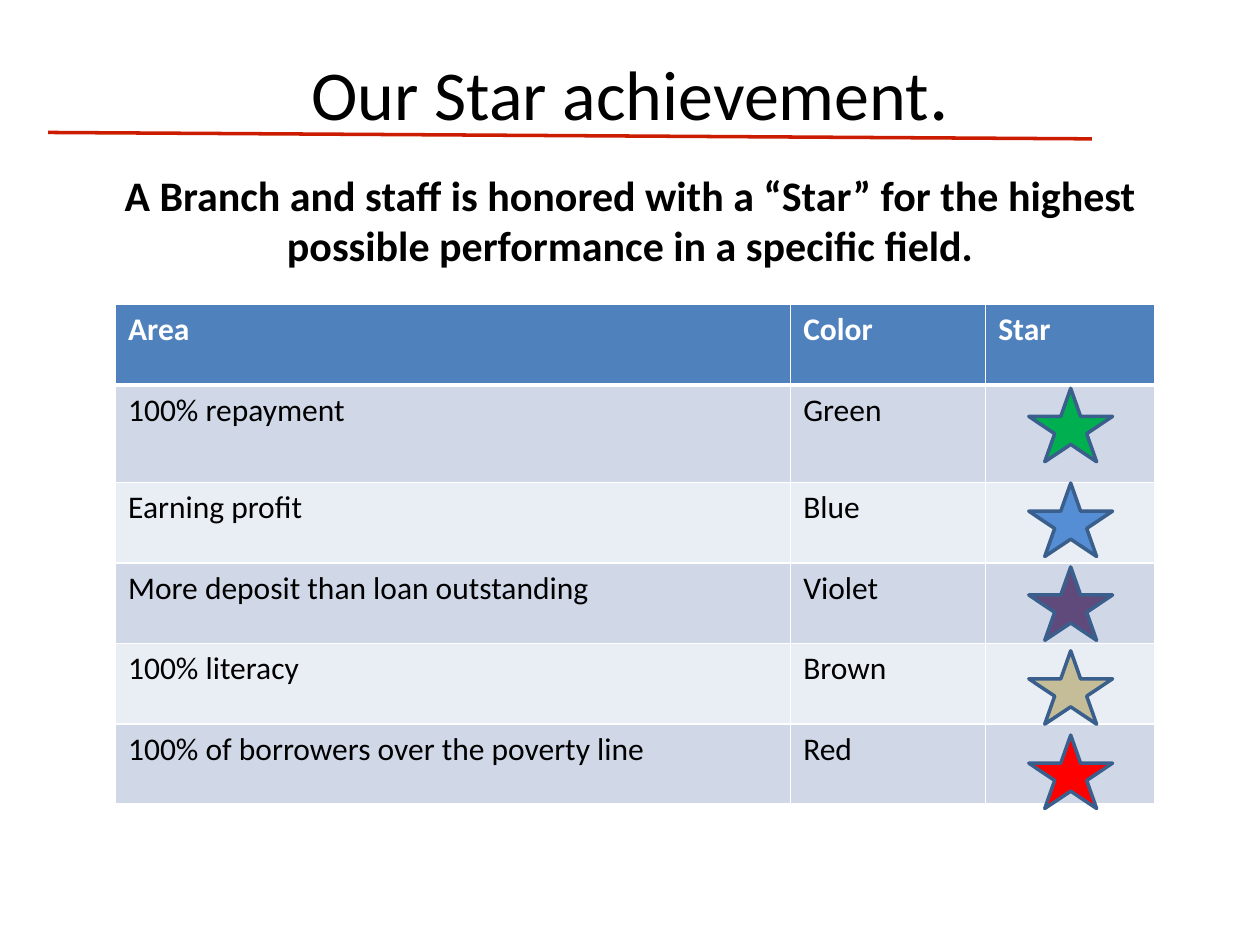
"""Build the slide on star awards for branches."""
from dataclasses import dataclass

from lxml import etree
from pptx import Presentation
from pptx import util as u
from pptx.dml.color import RGBColor
from pptx.enum import shapes, text
from pptx.oxml.ns import qn


@dataclass(frozen=True)
class Theme:
    face: str = "Calibri"
    ink: str = "000000"
    white: str = "FFFFFF"
    head: str = "4F81BD"
    bands: tuple = ("D0D8E8", "E9EDF4")
    rule: str = "CB1C00"
    edge: str = "3A5F8C"
    title: int = 40
    dot: int = 44
    lead: int = 24
    cell: int = 18
    line: int = 2
    thin: int = 1
    thick: int = 3


THEME = Theme()
AWARDS = [
    ("100% repayment", "Green", "00B050", 7.83),
    ("Earning profit", "Blue", "558ED5", 9.74),
    ("More deposit than loan outstanding", "Violet", "604A7B", 11.43),
    ("100% literacy", "Brown", "C4BD97", 13.12),
    ("100% of borrowers over the poverty line", "Red", "FF0000", 14.82),
]
WIDTHS = (13.61, 3.93, 3.41)
HEIGHTS = (1.62, 1.97, 1.62, 1.62, 1.62, 1.62)


def rgb(code):
    return RGBColor.from_string(code)


def style(font, size, color, bold=False):
    font.name, font.size, font.bold = THEME.face, u.Pt(size), bold
    font.color.rgb = rgb(color)


def fill_holder(holder, box, words, size, bold=False):
    holder.left, holder.top, holder.width, holder.height = map(u.Cm, box)
    frame = holder.text_frame
    frame.text = words
    frame.word_wrap = True
    frame.auto_size = text.MSO_AUTO_SIZE.NONE
    frame.vertical_anchor = text.MSO_ANCHOR.MIDDLE
    para = frame.paragraphs[0]
    para.alignment = text.PP_ALIGN.CENTER
    para.space_before = u.Pt(0)
    style(para.font, size, color=THEME.ink, bold=bold)
    return para


def add_rule(slide, start, end):
    rule = slide.shapes.add_connector(
        shapes.MSO_CONNECTOR.STRAIGHT, *map(u.Cm, start + end))
    rule.line.color.rgb = rgb(THEME.rule)
    rule.line.width = u.Pt(THEME.line)
    etree.SubElement(rule._element.spPr, qn("a:effectLst"))


def set_edges(cell, row):
    props = cell._tc.get_or_add_tcPr()
    thick = {(0, "lnB"), (1, "lnT")}
    for side in ("lnL", "lnR", "lnT", "lnB"):
        size = THEME.thick if (row, side) in thick else THEME.thin
        edge = etree.SubElement(props, qn(f"a:{side}"), w=str(u.Pt(size)))
        fill = etree.SubElement(edge, qn("a:solidFill"))
        etree.SubElement(fill, qn("a:srgbClr"), val=THEME.white)


def add_grid(slide, left, top):
    rows = [("Area", "Color", "Star")]
    rows += [(area, color, "") for area, color, _, _ in AWARDS]
    grid = slide.shapes.add_table(
        len(rows), len(WIDTHS), u.Cm(left), u.Cm(top),
        u.Cm(sum(WIDTHS)), u.Cm(sum(HEIGHTS))).table
    for col, width in zip(grid.columns, WIDTHS):
        col.width = u.Cm(width)
    for i, (row, height) in enumerate(zip(rows, HEIGHTS)):
        grid.rows[i].height = u.Cm(height)
        back = THEME.bands[(i - 1) % 2] if i else THEME.head
        for j, words in enumerate(row):
            cell = grid.cell(i, j)
            cell.text = words
            set_edges(cell, i)
            cell.fill.solid()
            cell.fill.fore_color.rgb = rgb(back)
            style(cell.text_frame.paragraphs[0].font, THEME.cell,
                  THEME.ink if i else THEME.white, bold=i == 0)


def add_star(slide, top, color):
    star = slide.shapes.add_shape(
        shapes.MSO_SHAPE.STAR_5_POINT, *map(u.Cm, (20.74, top, 1.69, 1.48)))
    star.shadow.inherit = False
    star.fill.solid()
    star.fill.fore_color.rgb = rgb(color)
    star.line.color.rgb = rgb(THEME.edge)
    star.line.width = u.Pt(THEME.line)


def main():
    deck = Presentation()
    deck.slide_width, deck.slide_height = u.Cm(25.4), u.Cm(19.05)
    slide = deck.slides.add_slide(deck.slide_layouts[0])
    title, lead = slide.placeholders
    para = fill_holder(title, (1.27, 0.21, 22.86, 3.18),
                       "Our Star achievement", THEME.title)
    dot = para.add_run()
    dot.text = "."
    dot.font.size = u.Pt(THEME.dot)
    fill_holder(lead, (1.91, 3.28, 21.59, 2.29),
                "A Branch and staff is honored with a “Star” for the highest "
                "possible performance in a specific field.",
                THEME.lead, bold=True)
    add_rule(slide, (22.01, 2.8), (0.97, 2.67))
    add_grid(slide, 2.33, 6.14)
    for _, _, color, top in AWARDS:
        add_star(slide, top, color)
    deck.save("out.pptx")


if __name__ == "__main__":
    main()
